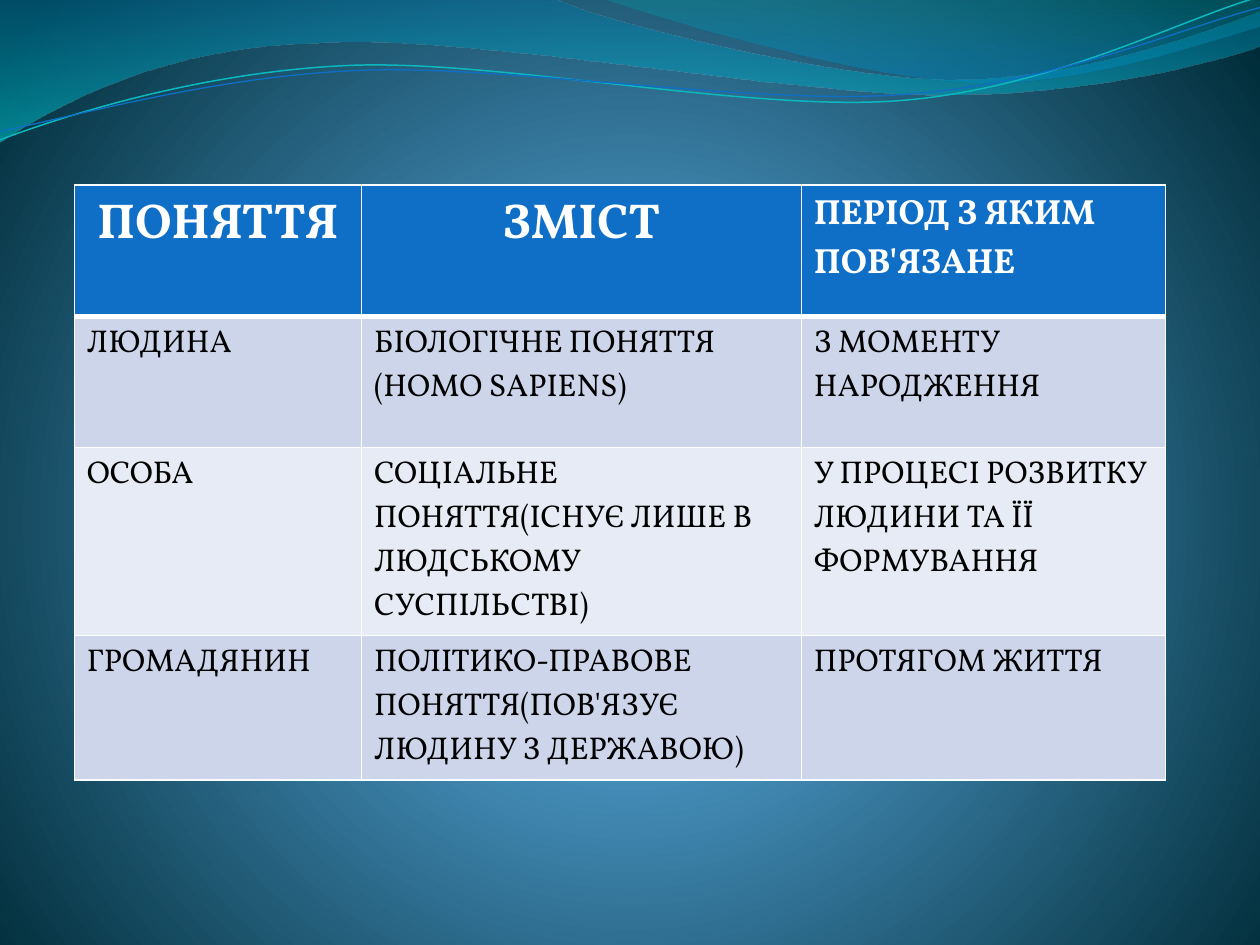
"""Build a slide with a table of three concepts on a wavy blue background."""
from lxml.etree import SubElement
from pptx import Presentation
from pptx.dml.color import RGBColor
from pptx.enum.text import PP_ALIGN
from pptx.oxml.ns import qn
from pptx.util import Pt

PX = 9144
FONT = "Vollkorn"
WHITE = RGBColor(0xFF, 0xFF, 0xFF)
BLACK = RGBColor(0, 0, 0)
BLUE = RGBColor(0x0F, 0x6F, 0xC6)
TEAL = RGBColor(0x0A, 0xB8, 0xBF)
BANDS = [RGBColor(0xE7, 0xEB, 0xF5), RGBColor(0xCC, 0xD5, 0xEA)]
SKY = RGBColor(0x4A, 0xA0, 0xD6)
STEEL = RGBColor(0x4C, 0x98, 0xC7)
NIGHT = RGBColor(0x00, 0x2C, 0x38)
OCEAN = RGBColor(0x00, 0x74, 0xA1)
AQUA = RGBColor(0x00, 0xC6, 0xCF)
SEA = RGBColor(0x00, 0xA1, 0xA9)
AZURE = RGBColor(0x00, 0x8B, 0xBF)

HEADERS = [("ПОНЯТТЯ", 28, PP_ALIGN.CENTER), ("ЗМІСТ", 28, PP_ALIGN.CENTER),
           ("ПЕРІОД З ЯКИМ ПОВ'ЯЗАНЕ", 20, PP_ALIGN.LEFT)]
ROWS = [
    ("ЛЮДИНА", "БІОЛОГІЧНЕ ПОНЯТТЯ\n(HOMO SAPIENS)", "З МОМЕНТУ НАРОДЖЕННЯ"),
    ("ОСОБА", "СОЦІАЛЬНЕ ПОНЯТТЯ(ІСНУЄ ЛИШЕ В ЛЮДСЬКОМУ СУСПІЛЬСТВІ)",
     "У ПРОЦЕСІ РОЗВИТКУ ЛЮДИНИ ТА ЇЇ ФОРМУВАННЯ"),
    ("ГРОМАДЯНИН", "ПОЛІТИКО-ПРАВОВЕ ПОНЯТТЯ(ПОВ'ЯЗУЄ ЛЮДИНУ З ДЕРЖАВОЮ)",
     "ПРОТЯГОМ ЖИТТЯ"),
]
LEFT, TOP, ROW_H = 59, 147, 104
COL_W = [228, 349, 289]

RIBBONS = [
    ([(0, 0), (440, -1), (476, 17, 664, 63, 758, 63), (853, 63, 958, 26, 1000, 9),
      (1001, 36), (983, 44, 870, 76, 746, 75), (622, 75, 382, 28, 257, 34),
      (129, 36, 46, 83, -1, 113), (0, 0)],
     [(0, OCEAN, 45), (100, AQUA, 55)]),
    ([(479, -1), (509, 11, 682, 62, 769, 65), (856, 69, 961, 32, 1000, 21),
      (1000, 0), (479, -1)],
     [(0, SEA, 30), (80, AZURE, 45)]),
]
WAVES = [
    ([(0, 111), (48, 93, 158, 57, 277, 52), (395, 47, 593, 89, 713, 80),
      (833, 71, 938, 15, 998, -2)], TEAL, 0.85),
    ([(0, 104), (47, 96, 164, 61, 283, 56), (403, 51, 597, 84, 717, 75),
      (836, 67, 941, 21, 1000, 6)], BLUE, 0.75),
]


def set_gradient(fill, owner, stops):
    fill.gradient()
    grad = next(owner.iter(qn("a:gradFill")))
    for child in list(grad):
        grad.remove(child)
    gs_list = SubElement(grad, qn("a:gsLst"))
    for pos, color, alpha in stops:
        gs = SubElement(gs_list, qn("a:gs"), pos=str(pos * 1000))
        clr = SubElement(gs, qn("a:srgbClr"), val=str(color))
        if alpha < 100:
            SubElement(clr, qn("a:alpha"), val=str(alpha * 1000))
    return grad


def add_curve(shapes, steps, close):
    points = [(step[i] * PX, step[i + 1] * PX) for step in steps
              for i in range(0, len(step), 2)]
    builder = shapes.build_freeform(*points[0])
    builder.add_line_segments(points[1:], close=close)
    sp = builder.convert_to_shape()
    lines = iter(list(sp._element.iter(qn("a:lnTo"))))
    for step in steps[1:]:
        first = next(lines)
        if len(step) == 6:
            first.tag = qn("a:cubicBezTo")
            for _ in range(2):
                line = next(lines)
                first.append(line[0])
                line.getparent().remove(line)
    sp.shadow.inherit = False
    return sp


def set_borders(cell, widths):
    tc_pr = cell._tc.get_or_add_tcPr()
    for side, width in zip("LRTB", widths):
        ln = SubElement(tc_pr, qn("a:ln" + side), w=str(Pt(width)))
        SubElement(SubElement(ln, qn("a:solidFill")), qn("a:srgbClr"), val=str(WHITE))


def fill_cell(cell, text, size, align, color, fill, bold, widths):
    set_borders(cell, widths)
    cell.fill.solid()
    cell.fill.fore_color.rgb = fill
    cell.text = text
    for p in cell.text_frame.paragraphs:
        p.alignment = align
        p.font.name, p.font.size, p.font.bold = FONT, Pt(size), bold
        p.font.color.rgb = color


def add_concepts(s):
    table = s.shapes.add_table(len(ROWS) + 1, len(COL_W), LEFT * PX, TOP * PX,
                               sum(COL_W) * PX, ROW_H * (len(ROWS) + 1) * PX).table
    for col, width in zip(table.columns, COL_W):
        col.width = width * PX
    for c, (text, size, align) in enumerate(HEADERS):
        fill_cell(table.cell(0, c), text, size, align, WHITE, BLUE, True, (1, 1, 1, 3))
    for r, row in enumerate(ROWS, 1):
        for c, text in enumerate(row):
            fill_cell(table.cell(r, c), text, 18, PP_ALIGN.LEFT, BLACK, BANDS[r % 2],
                      False, (1, 1, 3 if r == 1 else 1, 1))


def main():
    prs = Presentation()
    prs.slide_width, prs.slide_height = 1000 * PX, 750 * PX
    s = prs.slides.add_slide(prs.slide_layouts[6])
    grad = set_gradient(s.background.fill, s._element,
                        [(0, SKY, 100), (25, STEEL, 100), (100, NIGHT, 100)])
    circle = SubElement(grad, qn("a:path"), path="circle")
    SubElement(circle, qn("a:fillToRect"), l="10000", t="110000", r="10000", b="100000")
    for steps, stops in RIBBONS:
        sp = add_curve(s.shapes, steps, True)
        sp.line.fill.background()
        grad = set_gradient(sp.fill, sp._element, stops)
        SubElement(grad, qn("a:lin"), ang="5400000", scaled="0")
    group = s.shapes.add_group_shape()
    for steps, color, width in WAVES:
        sp = add_curve(group.shapes, steps, False)
        sp.fill.background()
        sp.line.color.rgb = color
        sp.line.width = Pt(width)
    add_concepts(s)
    prs.save("out.pptx")


if __name__ == "__main__":
    main()
